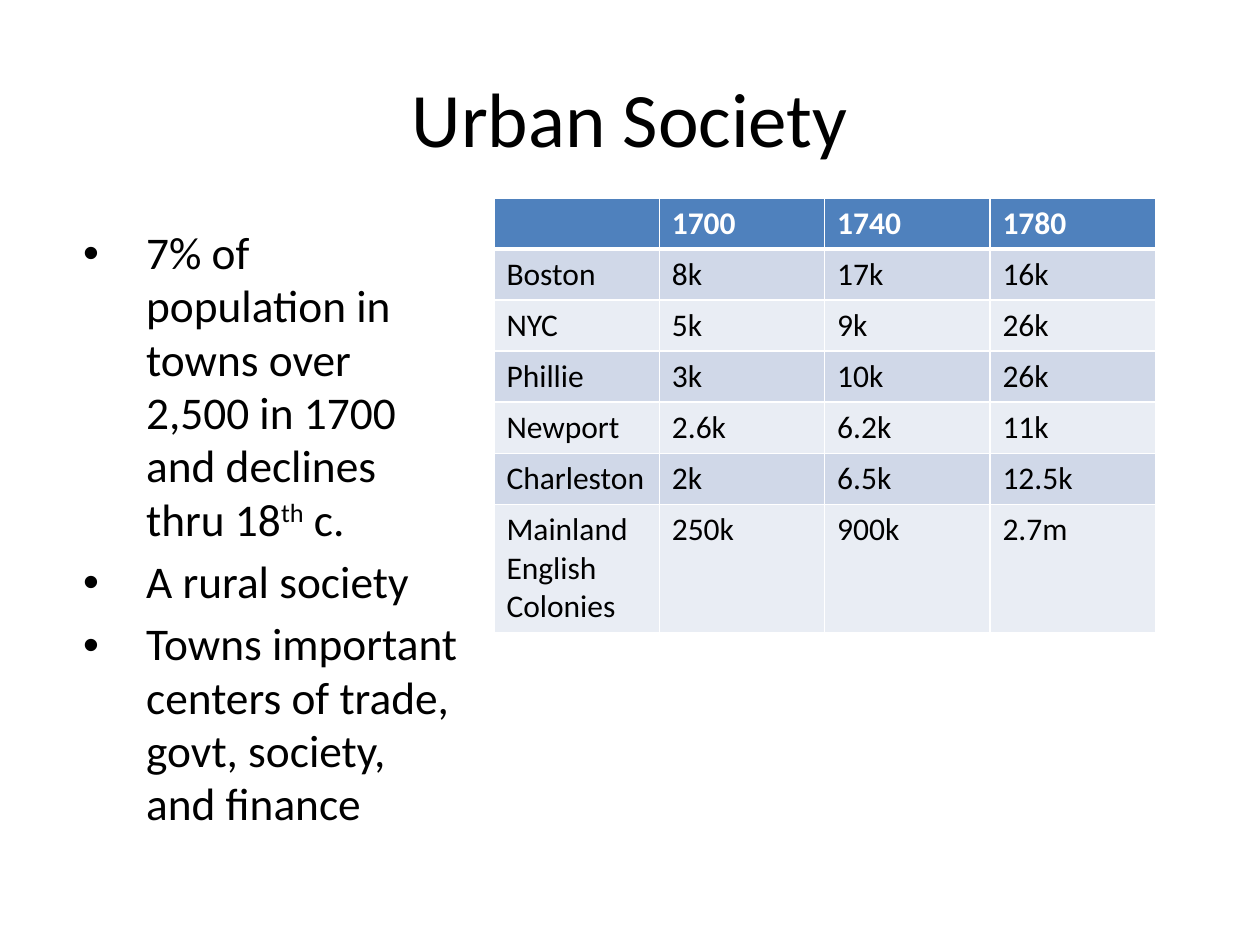
import pptx
import pptx.dml.color
import pptx.enum.text
import pptx.oxml
import pptx.util
from lxml import etree
from pptx.oxml.ns import qn

TITLE = "Urban Society"
# Each bullet is a list of (text, is_superscript) runs.
BULLETS = [
    [("7% of population in towns over 2,500 in 1700 and declines thru 18", False),
     ("th", True), (" c.", False)],
    [("A rural society", False)],
    [("Towns important centers of trade, govt, society, and finance", False)],
]
POPULATION = [
    ("", "1700", "1740", "1780"),
    ("Boston", "8k", "17k", "16k"),
    ("NYC", "5k", "9k", "26k"),
    ("Phillie", "3k", "10k", "26k"),
    ("Newport", "2.6k", "6.2k", "11k"),
    ("Charleston", "2k", "6.5k", "12.5k"),
    ("Mainland English Colonies", "250k", "900k", "2.7m"),
]
THEME = {
    "font": "Calibri", "text": "000000", "header_text": "FFFFFF",
    "header": "4F81BD", "bands": ("D0D8E8", "E9EDF4"), "border": "FFFFFF",
    "title_pt": 44, "body_pt": 25.9, "table_pt": 18,
}
WIDTH, HEIGHT = 10, 7.5
MARGIN = 0.05 * WIDTH
TITLE_BOX = (MARGIN, 0.04 * HEIGHT, WIDTH - 2 * MARGIN, HEIGHT / 6)
BODY_BOX = (MARGIN, 1.75, 3.25, 0.66 * HEIGHT)
TABLE_LEFT, TABLE_TOP, TABLE_WIDTH = 3.92, 1.57, 5.25
ROW_HEIGHT, LAST_ROW_HEIGHT = 0.4, 1.0

Inches, Pt = pptx.util.Inches, pptx.util.Pt
rgb = pptx.dml.color.RGBColor.from_string


def place(shape, box):
    for name, value in zip(("left", "top", "width", "height"), box):
        setattr(shape, name, Inches(value))


def format_font(font, size, color=THEME["text"], bold=False):
    for name, value in {"name": THEME["font"], "size": Pt(size), "bold": bold}.items():
        setattr(font, name, value)
    font.color.rgb = rgb(color)


def add_title(s):
    title = s.shapes.title
    place(title, TITLE_BOX)
    tf = title.text_frame
    tf.text = TITLE
    tf.auto_size = pptx.enum.text.MSO_AUTO_SIZE.NONE
    tf.vertical_anchor = pptx.enum.text.MSO_ANCHOR.MIDDLE
    p = tf.paragraphs[0]
    p.alignment = pptx.enum.text.PP_ALIGN.CENTER
    format_font(p.runs[0].font, THEME["title_pt"])


def add_bullets(s):
    body = s.placeholders[1]
    place(body, BODY_BOX)
    tf = body.text_frame
    tf.auto_size = pptx.enum.text.MSO_AUTO_SIZE.NONE
    for i, runs in enumerate(BULLETS):
        p = tf.add_paragraph() if i else tf.paragraphs[0]
        p.line_spacing = 0.98
        p.space_before = Pt(0.2 * THEME["body_pt"] if i else 0)
        pPr = p._p.get_or_add_pPr()
        pPr.set("marL", str(Inches(0.56)))
        pPr.set("indent", str(Inches(-0.5)))
        etree.SubElement(pPr, qn("a:buFont")).set("typeface", "Arial")
        etree.SubElement(pPr, qn("a:buChar")).set("char", "•")
        for text, superscript in runs:
            r = p.add_run()
            r.text = text
            format_font(r.font, THEME["body_pt"])
            if superscript:
                r._r.get_or_add_rPr().set("baseline", "30000")


def set_borders(cell, widths):
    """Put lines of the given point widths (left, right, top, bottom) before the fill."""
    tcPr = cell._tc.get_or_add_tcPr()
    for i, (side, width) in enumerate(zip("LRTB", widths)):
        ln = etree.Element(qn(f"a:ln{side}"), w=str(Pt(width)))
        fill = etree.SubElement(ln, qn("a:solidFill"))
        etree.SubElement(fill, qn("a:srgbClr")).set("val", THEME["border"])
        tcPr.insert(i, ln)


def add_population_table(s):
    rows, cols = len(POPULATION), len(POPULATION[0])
    heights = [ROW_HEIGHT] * (rows - 1) + [LAST_ROW_HEIGHT]
    table = s.shapes.add_table(rows, cols, Inches(TABLE_LEFT), Inches(TABLE_TOP),
                               Inches(TABLE_WIDTH), Inches(sum(heights))).table
    for row, height in zip(table.rows, heights):
        row.height = Inches(height)
    for i, values in enumerate(POPULATION):
        header = i == 0
        fill = THEME["header"] if header else THEME["bands"][(i - 1) % 2]
        color = THEME["header_text"] if header else THEME["text"]
        for j, value in enumerate(values):
            cell = table.cell(i, j)
            cell.fill.solid()
            cell.fill.fore_color.rgb = rgb(fill)
            set_borders(cell, (1, 1, 3 if i == 1 else 1, 3 if header else 1))
            if value:
                cell.text = value
                format_font(cell.text_frame.paragraphs[0].runs[0].font,
                            THEME["table_pt"], color, header)


def main():
    prs = pptx.Presentation()
    prs.slide_width, prs.slide_height = Inches(WIDTH), Inches(HEIGHT)
    s = prs.slides.add_slide(prs.slide_layouts[1])
    add_title(s)
    add_bullets(s)
    add_population_table(s)
    prs.save("out.pptx")


if __name__ == "__main__":
    main()
